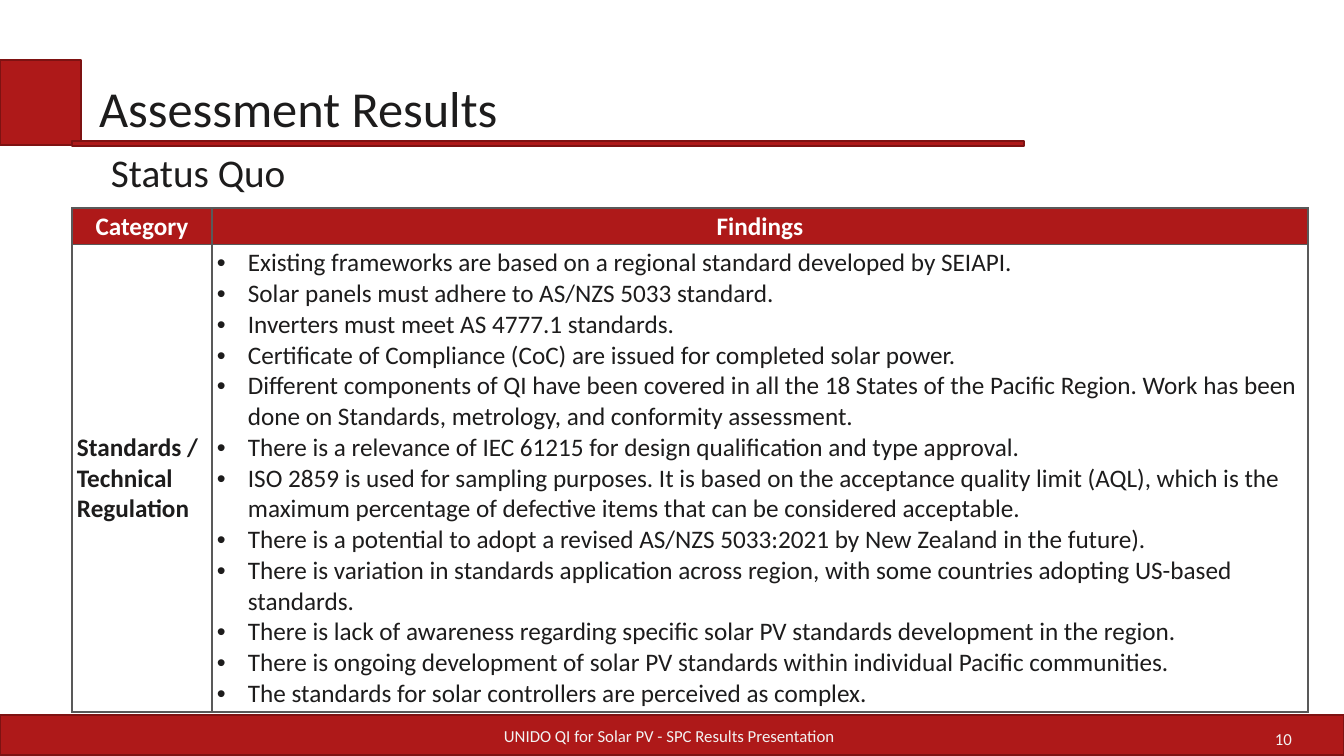
from lxml.etree import SubElement
from pptx import Presentation
from pptx.dml.color import RGBColor
from pptx.enum.shapes import MSO_SHAPE as Preset
from pptx.enum.text import MSO_ANCHOR as Anchor, MSO_AUTO_SIZE as AutoSize, PP_ALIGN as Align
from pptx.oxml.ns import qn
from pptx.util import Pt

PX = 12192000 / 1344  # EMU per px
FONT = "Calibri"
COLORS = {
    "red": "AE1919",
    "dark_red": "7E1212",
    "ink": "1D1C1C",
    "pale": "F2F2F2",
    "white": "FFFFFF",
    "grid": "595959",
}
FINDINGS = [
    "Existing frameworks are based on a regional standard developed by SEIAPI.",
    "Solar panels must adhere to AS/NZS 5033 standard.",
    "Inverters must meet AS 4777.1 standards.",
    "Certificate of Compliance (CoC) are issued for completed solar power.",
    "Different components of QI have been covered in all the 18 States of the Pacific Region. "
    "Work has been done on Standards, metrology, and conformity assessment.",
    "There is a relevance of IEC 61215 for design qualification and type approval.",
    "ISO 2859 is used for sampling purposes. It is based on the acceptance quality limit (AQL), "
    "which is the maximum percentage of defective items that can be considered acceptable.",
    "There is a potential to adopt a revised AS/NZS 5033:2021 by New Zealand in the future).",
    "There is variation in standards application across region, with some countries adopting "
    "US-based standards.",
    "There is lack of awareness regarding specific solar PV standards development in the region.",
    "There is ongoing development of solar PV standards within individual Pacific communities.",
    "The standards for solar controllers are perceived as complex.",
]


def px(length):
    return round(length * PX)


def color(name):
    return RGBColor.from_string(COLORS[name])


def add_bar(slide, *box):
    bar = slide.shapes.add_shape(Preset.RECTANGLE, *map(px, box))
    bar.shadow.inherit = False
    bar.fill.solid()
    bar.fill.fore_color.rgb = color("red")
    bar.line.color.rgb = color("dark_red")
    bar.line.width = Pt(0.85)


def set_margins(target, across, down):
    target.margin_left = target.margin_right = px(across)
    target.margin_top = target.margin_bottom = px(down)


def write(paragraph, text, size, ink, align=Align.LEFT, bold=False):
    paragraph.alignment = align
    run = paragraph.add_run()
    run.text = text
    run.font.name = FONT
    run.font.size = Pt(size)
    run.font.bold = bold
    run.font.color.rgb = color(ink)


def write_frame(shape, text, size, ink, align, inset, anchor):
    frame = shape.text_frame
    frame.word_wrap = True
    frame.auto_size = AutoSize.NONE
    frame.vertical_anchor = anchor
    set_margins(frame, *inset)
    write(frame.paragraphs[0], text, size, ink, align)
    return frame.paragraphs[0]


def add_text(slide, box, *style):
    return write_frame(slide.shapes.add_textbox(*map(px, box)), *style)


def build_header(slide, left, top):
    # Square and rule
    add_bar(slide, left, top, 81, 85)
    add_bar(slide, left + 72, top + 81, 952, 5)

    # Title and subtitle
    title = slide.shapes.title
    title.left, title.top = px(left + 86), px(top + 4)
    title.width, title.height = px(848), px(87)
    heading = ("ink", Align.LEFT, (13, 13), Anchor.TOP)
    write_frame(title, "Assessment Results", 36, *heading)
    subtitle = add_text(slide, (left + 86, top + 68, 265, 64), "Status Quo", 28, *heading)
    subtitle.line_spacing = 1.15
    subtitle._p.get_or_add_pPr().set("marL", str(px(12)))


def build_footer(slide, left, top, width, height):
    add_bar(slide, left, top, width, height)
    label = (12, "pale")
    add_text(slide, (left + 364, top + 1, 611, height),
             "UNIDO QI for Solar PV - SPC Results Presentation",
             *label, Align.CENTER, (10, 10), Anchor.MIDDLE)
    add_text(slide, (left + 985, top + 4, 317, height), "10",
             *label, Align.RIGHT, (10, 5), Anchor.MIDDLE)


def add_bullet(paragraph):
    properties = paragraph._p.get_or_add_pPr()
    properties.set("marL", str(px(31)))
    properties.set("indent", str(-px(31)))
    SubElement(properties, qn("a:buFont"), typeface="Arial")
    SubElement(properties, qn("a:buChar"), char="•")


def format_cell(cell, fill=None):
    cell.vertical_anchor = Anchor.MIDDLE
    set_margins(cell, 5, 3)
    properties = cell._tc.get_or_add_tcPr()
    for side in ("lnL", "lnR", "lnT", "lnB"):
        border = SubElement(properties, qn(f"a:{side}"), w=str(Pt(1)))
        solid = SubElement(border, qn("a:solidFill"))
        SubElement(solid, qn("a:srgbClr"), val=COLORS["grid"])
    if fill:
        cell.fill.solid()
        cell.fill.fore_color.rgb = color(fill)
    else:
        cell.fill.background()


def build_table(slide, left, top, column_widths, row_heights):
    box = (left, top, sum(column_widths), sum(row_heights))
    table = slide.shapes.add_table(2, 2, *map(px, box)).table
    table.horz_banding = False
    for column, width in zip(table.columns, column_widths):
        column.width = px(width)
    for row, height in zip(table.rows, row_heights):
        row.height = px(height)

    # Header row
    for index, text in enumerate(("Category", "Findings")):
        cell = table.cell(0, index)
        format_cell(cell, "red")
        write(cell.text_frame.paragraphs[0], text, 18, "white", Align.CENTER, True)

    # Category and its findings
    category, findings = table.cell(1, 0), table.cell(1, 1)
    format_cell(category)
    format_cell(findings)
    write(category.text_frame.paragraphs[0], "Standards / Technical Regulation", 18, "ink", bold=True)
    frame = findings.text_frame
    for index, text in enumerate(FINDINGS):
        paragraph = frame.add_paragraph() if index else frame.paragraphs[0]
        add_bullet(paragraph)
        write(paragraph, text, 18, "ink")


def main():
    presentation = Presentation()
    presentation.slide_width, presentation.slide_height = px(1344), px(756)
    slide = presentation.slides.add_slide(presentation.slide_layouts[5])
    build_footer(slide, 0, 715, 1344, 40)
    build_header(slide, 0, 60)
    build_table(slide, 72, 208, (140, 1096), (36, 466))
    presentation.save("out.pptx")


if __name__ == "__main__":
    main()
